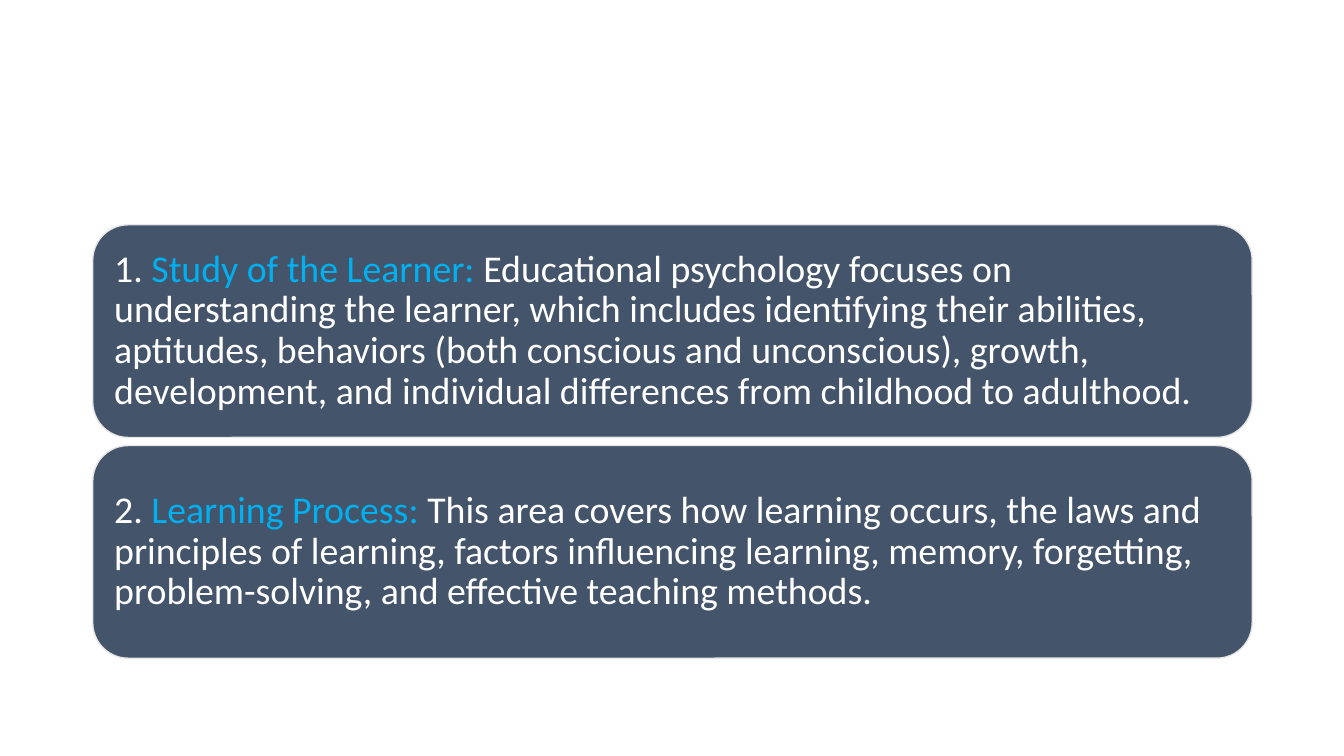
import pptx
import pptx.util
import pptx.dml.color
import pptx.enum.shapes
import pptx.enum.text

RGBColor = pptx.dml.color.RGBColor
SLATE = RGBColor(0x44, 0x54, 0x6A)
PALE = RGBColor(0xE7, 0xE6, 0xE6)
WHITE = RGBColor(0xFF, 0xFF, 0xFF)
BLUE = RGBColor(0x00, 0xB0, 0xF0)
Inches = pptx.util.Inches

# Slide
deck = pptx.Presentation()
deck.slide_width, deck.slide_height = Inches(13.33), Inches(7.5)
slide = deck.slides.add_slide(deck.slide_layouts[6])

# Grid: one column, two rows
LEFT, TOP = 0.92, 2.23
WIDTH, HEIGHT = 11.5, 2.11
STEP = HEIGHT + 0.08

topics = [
    ("Study of the Learner: ",
     "Educational psychology focuses on understanding the learner, which "
     "includes identifying their abilities, aptitudes, behaviors (both "
     "conscious and unconscious), growth, development, and individual "
     "differences from childhood to adulthood."),
    ("Learning Process: ",
     "This area covers how learning occurs, the laws and principles of "
     "learning, factors influencing learning, memory, forgetting, "
     "problem-solving, and effective teaching methods."),
]

# Formats
frame_look = {
    "word_wrap": True,
    "vertical_anchor": pptx.enum.text.MSO_ANCHOR.MIDDLE,
    "margin_left": Inches(0.11),
    "margin_right": Inches(0.11),
    "margin_top": Inches(0.11),
    "margin_bottom": Inches(0.11),
}
para_look = {"alignment": pptx.enum.text.PP_ALIGN.LEFT, "line_spacing": 0.9}
font_look = {"name": "Calibri", "size": pptx.util.Pt(27)}

# Topic cards
for row, (head, body) in enumerate(topics):
    card = slide.shapes.add_shape(
        pptx.enum.shapes.MSO_SHAPE.ROUNDED_RECTANGLE,
        Inches(LEFT), Inches(TOP + row * STEP), Inches(WIDTH), Inches(HEIGHT))
    card.name = f"Topic {row + 1}"
    card.shadow.inherit = False
    card.fill.solid()
    card.fill.fore_color.rgb = SLATE
    card.line.color.rgb = PALE
    card.line.width = pptx.util.Pt(1)

    frame = card.text_frame
    para = frame.paragraphs[0]
    for part, look in ((frame, frame_look), (para, para_look)):
        for key, value in look.items():
            setattr(part, key, value)

    # Number, heading and body
    for text, color in ((f"{row + 1}. ", WHITE), (head, BLUE), (body, WHITE)):
        run = para.add_run()
        run.text = text
        run.font.color.rgb = color
        for key, value in font_look.items():
            setattr(run.font, key, value)

deck.save("out.pptx")
